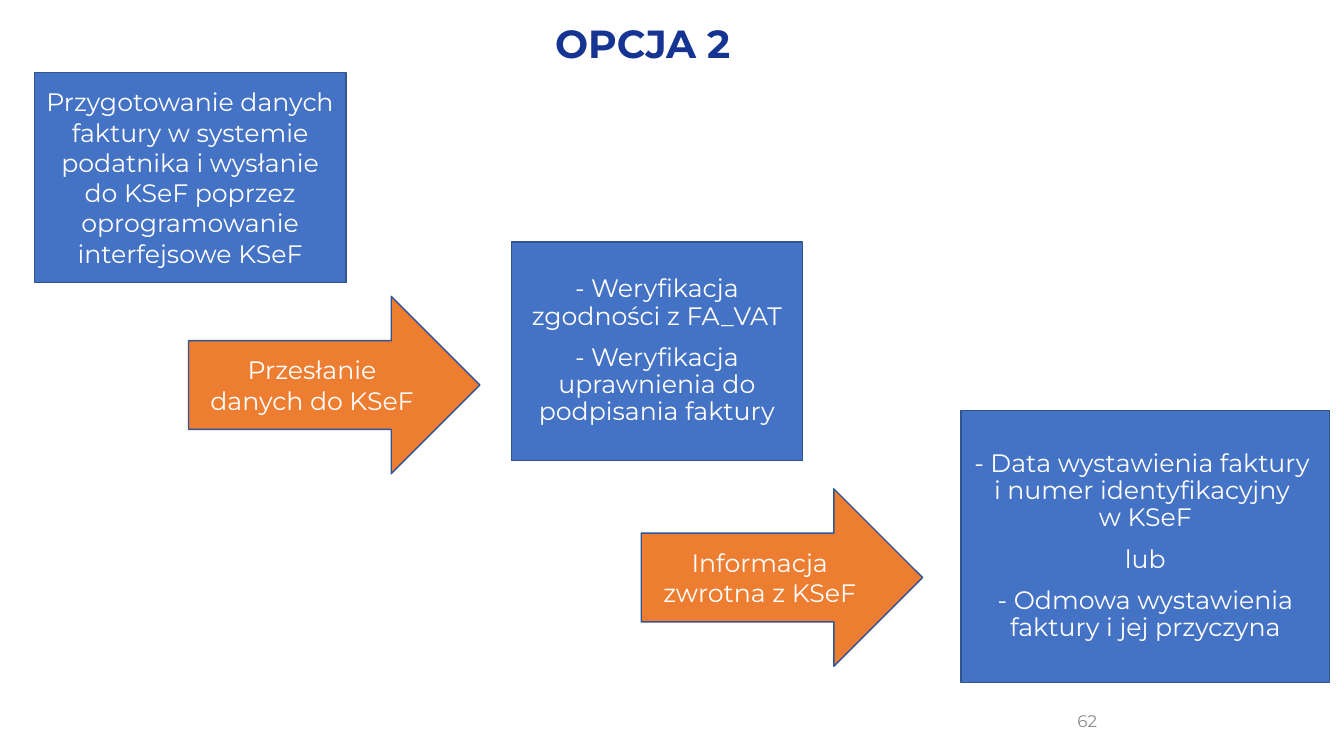
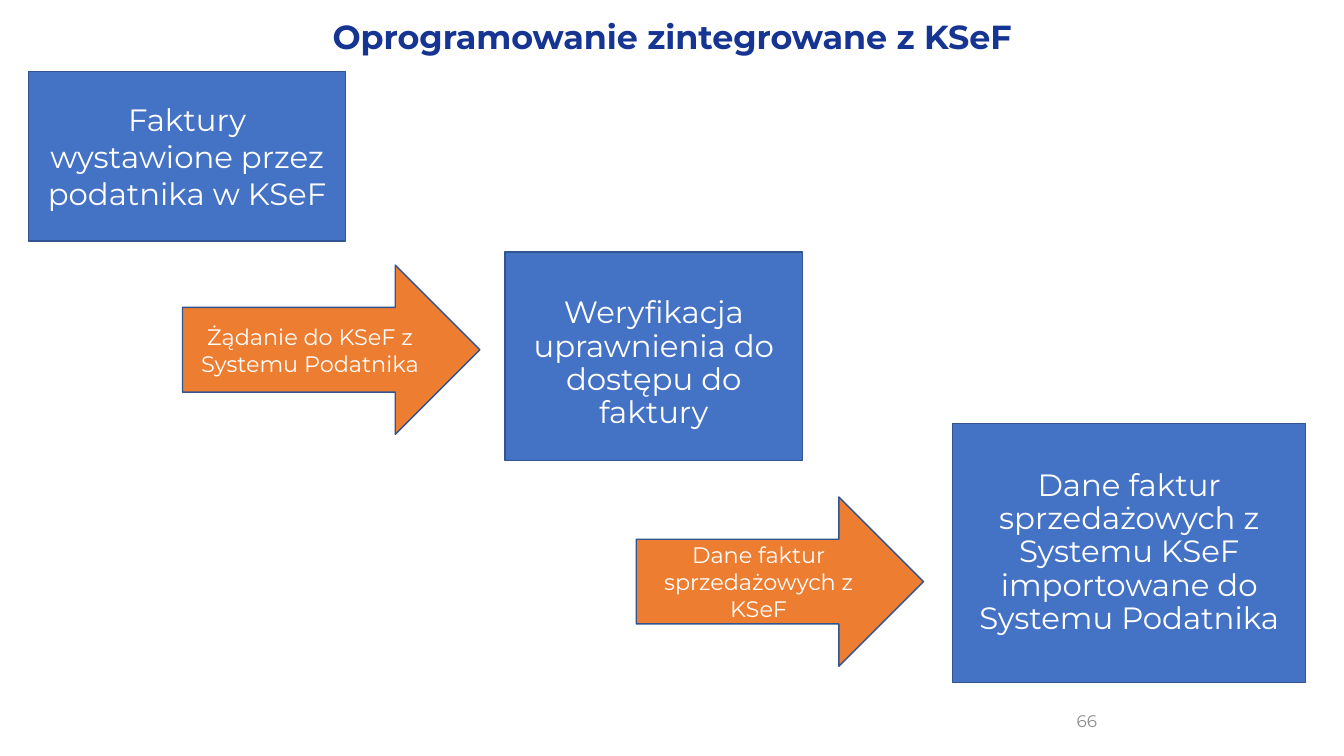
from dataclasses import dataclass
from typing import Optional

from lxml.etree import SubElement
from pptx import Presentation
from pptx.dml.color import RGBColor as Rgb
from pptx.enum.shapes import MSO_SHAPE as Kind
from pptx.enum.text import MSO_ANCHOR as Anchor, MSO_AUTO_SIZE as Fit, PP_ALIGN as Align
from pptx.oxml.ns import qn
from pptx.util import Inches, Pt

FONT = "Montserrat"
BLUE, ORANGE, EDGE = "4472C4", "ED7D31", "325491"
WHITE, NAVY, GRAY = "FFFFFF", "163593", "8C8C8C"
WIDE = (0.1, 0.05, 0.1, 0.05)
SLIM = (0.07, 0.04, 0.07, 0.04)
NUMBER = (8.73, 6.95, 2.25, 0.4)

Rect = tuple[float, float, float, float]


@dataclass
class Block:
    """One step of the flow: a box, an arrow or the body."""
    at: Rect
    lines: list[str]
    size: float
    kind: Optional[Kind] = Kind.RECTANGLE
    fill: str = BLUE
    lead: float = 1.0
    inset: Rect = WIDE


@dataclass
class Sheet:
    """One slide: its title, number and steps."""
    title: str
    at: Rect
    size: float
    lead: float
    number: str
    blocks: list[Block]


def arrow(at: Rect, text: str, size: float) -> Block:
    """Describe an orange arrow."""
    return Block(at, [text], size, Kind.RIGHT_ARROW, ORANGE)


def color(code: str) -> Rgb:
    """Turn a hex string into a colour."""
    return Rgb.from_string(code)


def place(shape, at: Rect) -> None:
    """Move and size a shape."""
    shape.left, shape.top, shape.width, shape.height = map(Inches, at)


def write(shape, lines: list[str], *, size: float, ink: str = WHITE, bold: bool = False,
          align: Align = Align.CENTER, anchor: Anchor = Anchor.MIDDLE,
          lead: float = 1.0, inset: Rect = WIDE) -> None:
    """Fill a shape with formatted paragraphs."""
    frame = shape.text_frame
    frame.word_wrap, frame.auto_size = True, Fit.NONE
    frame.vertical_anchor = anchor
    frame.margin_left, frame.margin_top, frame.margin_right, frame.margin_bottom = map(Inches, inset)
    for index, line in enumerate(lines):
        para = frame.add_paragraph() if index else frame.paragraphs[0]
        para.text = line
        para.alignment, para.line_spacing = align, lead
        para.space_before = Pt(10 if index else 0)
        if shape.is_placeholder:
            props = para._p.get_or_add_pPr()
            props.set("marL", "0")
            props.set("indent", "0")
            SubElement(props, qn("a:buNone"))
        for run in para.runs:
            font = run.font
            font.name, font.size, font.bold = FONT, Pt(size), bold
            font.color.rgb = color(ink)


def draw(slide, block: Block) -> None:
    """Draw one step, in the body placeholder if it has no kind."""
    if block.kind is None:
        shape = slide.placeholders[1]
        place(shape, block.at)
    else:
        shape = slide.shapes.add_shape(block.kind, *map(Inches, block.at))
        shape.shadow.inherit = False
    shape.fill.solid()
    shape.fill.fore_color.rgb = color(block.fill)
    shape.line.color.rgb = color(EDGE)
    shape.line.width = Pt(1)
    write(shape, block.lines, size=block.size, lead=block.lead, inset=block.inset)


def build(deck, sheet: Sheet) -> None:
    """Add one slide."""
    slide = deck.slides.add_slide(deck.slide_layouts[1])
    title = slide.shapes.title
    place(title, sheet.at)
    write(title, [sheet.title], size=sheet.size, ink=NAVY, bold=True,
          anchor=Anchor.TOP, lead=sheet.lead)
    for block in sheet.blocks:
        draw(slide, block)
    label = slide.shapes.add_textbox(*map(Inches, NUMBER))
    write(label, [sheet.number], size=12, ink=GRAY, align=Align.RIGHT)


SHEETS = [
    Sheet("OPCJA 2", (4.46, 0.19, 3.83, 0.7), 28, 0.9, "62", [
        Block((0.34, 0.72, 3.09, 2.08),
              ["Przygotowanie danych faktury w systemie podatnika i wysłanie "
               "do KSeF poprzez oprogramowanie interfejsowe KSeF"], 18),
        arrow((1.87, 2.94, 2.89, 1.76), "Przesłanie danych do KSeF", 18),
        Block((5.07, 2.4, 2.89, 2.17),
              ["- Weryfikacja zgodności z FA_VAT",
               "- Weryfikacja uprawnienia do podpisania faktury"], 18, None, lead=0.9),
        arrow((6.36, 4.85, 2.79, 1.76), "Informacja zwrotna z KSeF", 18),
        Block((9.53, 4.07, 3.66, 2.7),
              ["- Data wystawienia faktury \ni numer identyfikacyjny \nw KSeF", "lub",
               "- Odmowa wystawienia faktury i jej przyczyna"], 18, lead=0.9, inset=SLIM),
    ]),
    Sheet("Oprogramowanie zintegrowane z KSeF", (3.04, 0.19, 7.25, 0.7), 23.8, 0.8, "66", [
        Block((0.28, 0.71, 3.15, 1.68), ["Faktury wystawione przez podatnika w KSeF"], 22),
        arrow((1.81, 2.63, 2.95, 1.68), "Żądanie do KSeF z Systemu Podatnika", 16),
        Block((5.01, 2.5, 2.95, 2.07), ["Weryfikacja uprawnienia do dostępu do faktury"],
              22, None, lead=0.9, inset=(0.1, 0.2, 0.1, 0.05)),
        arrow((6.31, 4.93, 2.85, 1.68), "Dane faktur sprzedażowych z KSeF", 16),
        Block((9.45, 4.2, 3.5, 2.57),
              ["Dane faktur sprzedażowych z Systemu KSeF importowane do Systemu Podatnika"],
              22, lead=0.9, inset=SLIM),
    ]),
]


def main() -> None:
    """Build and save the deck."""
    deck = Presentation()
    deck.slide_width, deck.slide_height = Inches(13.33), Inches(7.5)
    for sheet in SHEETS:
        build(deck, sheet)
    deck.save("out.pptx")


if __name__ == "__main__":
    main()
